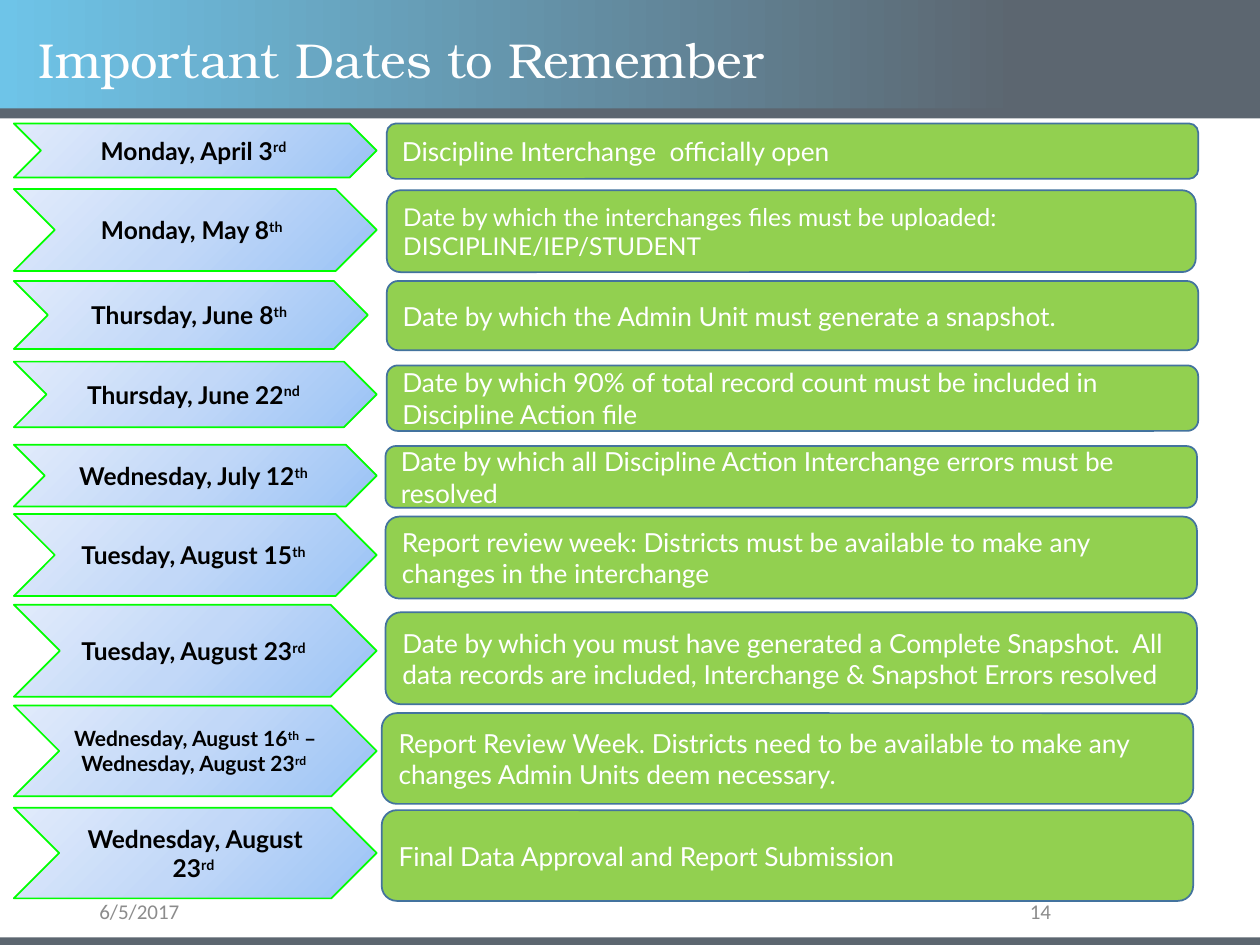
from lxml.etree import SubElement
from pptx import Presentation
from pptx.dml.color import RGBColor
from pptx.enum.shapes import MSO_SHAPE
from pptx.enum.text import MSO_ANCHOR, PP_ALIGN
from pptx.oxml.ns import qn
from pptx.util import Inches, Pt

rgb = RGBColor.from_string


def gradient(sp, stops):
    sp.fill.gradient()
    grad = sp._element.spPr.find(qn("a:gradFill"))
    for child in list(grad):
        grad.remove(child)
    gs_list = SubElement(grad, qn("a:gsLst"))
    for pos, color in stops:
        gs = SubElement(gs_list, qn("a:gs"), pos=str(pos * 1000))
        SubElement(gs, qn("a:srgbClr"), val=color)
    return grad


def write(sp, runs, size, font, color, align=PP_ALIGN.LEFT, bold=False):
    tf = sp.text_frame
    tf.word_wrap = True
    tf.vertical_anchor = MSO_ANCHOR.MIDDLE
    p = tf.paragraphs[0]
    p.alignment = align
    for i, text in enumerate(runs):
        r = p.add_run()
        r.text = text
        r.font.size = Pt(size)
        r.font.name = font
        r.font.bold = bold
        r.font.color.rgb = rgb(color)
        if i % 2:
            r.font._element.set("baseline", "30000")
    return p


prs = Presentation()
prs.slide_width, prs.slide_height = Inches(10), Inches(7.5)
s = prs.slides.add_slide(prs.slide_layouts[6])

for y, h in [(0, 0.87), (0.86, 0.08), (7.44, 0.08)]:
    bar = s.shapes.add_shape(MSO_SHAPE.RECTANGLE, 0, Inches(y), Inches(10), Inches(h))
    bar.shadow.inherit = False
    bar.line.fill.background()
    if y == 0:
        grad = gradient(bar, [(0, "6EC4E8"), (81, "5C6670")])
        SubElement(grad, qn("a:lin"), ang="0", scaled="0")
    else:
        bar.fill.solid()
        bar.fill.fore_color.rgb = rgb("5C6670")

labels = [
    (0.69, 7.12, 2.25, 0.23, "6/5/2017", 12, "Calibri", "8C8C8C", PP_ALIGN.LEFT),
    (7.06, 7.12, 1.38, 0.23, "14", 12, "Calibri", "8C8C8C", PP_ALIGN.RIGHT),
    (0.21, 0.21, 8.62, 0.57, "Important Dates to Remember", 28, "TeX Gyre Bonum", "FFFFFF", PP_ALIGN.LEFT),
]
for x, y, w, h, text, size, font, color, align in labels:
    tb = s.shapes.add_textbox(Inches(x), Inches(y), Inches(w), Inches(h))
    p = write(tb, [text], size, font, color, align)
    if size == 28:
        p.line_spacing = 0.9

rows = [
    (0.98, 2.88, 0.43, ["Monday, April 3", "rd "], 14,
     3.07, 0.98, 6.44, 0.44, "Discipline Interchange  officially open", 15),
    (1.5, 2.88, 0.65, ["Monday, May 8", "th  "], 14,
     3.07, 1.51, 6.42, 0.65, "Date by which the interchanges files must be uploaded: DISCIPLINE/IEP/STUDENT", 14),
    (2.23, 2.81, 0.54, ["Thursday, June 8", "th "], 14,
     3.07, 2.23, 6.44, 0.55, "Date by which the Admin Unit must generate a snapshot.", 15),
    (2.87, 2.88, 0.52, ["Thursday, June 22", "nd "], 14,
     3.07, 2.9, 6.44, 0.52, "Date by which 90% of total record count must be included in Discipline Action file", 15),
    (3.53, 2.88, 0.49, ["Wednesday, July 12", "th "], 14,
     3.06, 3.54, 6.44, 0.49, "Date by which all Discipline Action Interchange errors must be resolved", 15),
    (4.08, 2.88, 0.65, ["Tuesday, August 15", "th "], 14,
     3.06, 4.1, 6.44, 0.65,
     "Report review week: Districts must be available to make any changes in the interchange", 15),
    (4.8, 2.88, 0.73, ["Tuesday, August 23", "rd "], 14,
     3.06, 4.86, 6.44, 0.73,
     "Date by which you must have generated a Complete Snapshot.  All data records are included, "
     "Interchange & Snapshot Errors resolved", 15),
    (5.6, 2.88, 0.72, ["Wednesday, August 16", "th", " – Wednesday, August 23", "rd "], 12,
     3.03, 5.66, 6.44, 0.72,
     "Report Review Week. Districts need to be available to make any changes Admin Units deem necessary.", 15),
    (6.41, 2.88, 0.72, ["Wednesday, August 23", "rd "], 14,
     3.03, 6.43, 6.44, 0.72, "Final Data Approval and Report Submission", 15),
]
for date_y, date_w, date_h, date, date_size, x, y, w, h, task, task_size in rows:
    chevron = s.shapes.add_shape(
        MSO_SHAPE.CHEVRON, Inches(0.11), Inches(date_y), Inches(date_w), Inches(date_h))
    grad = gradient(chevron, [(0, "9AC3F5"), (50, "C2D8F8"), (100, "E1EBFB")])
    circle = SubElement(grad, qn("a:path"), path="circle")
    SubElement(circle, qn("a:fillToRect"), l="100000", t="100000")
    write(chevron, date, date_size, "Lato", "000000", PP_ALIGN.CENTER, True)

    box = s.shapes.add_shape(
        MSO_SHAPE.ROUNDED_RECTANGLE, Inches(x), Inches(y), Inches(w), Inches(h))
    box.fill.solid()
    box.fill.fore_color.rgb = rgb("92D050")
    write(box, [task], task_size, "Lato", "FFFFFF")

    for sp, color in [(chevron, "00FF00"), (box, "43739E")]:
        sp.shadow.inherit = False
        sp.line.color.rgb = rgb(color)
        sp.line.width = Pt(1)

prs.save("out.pptx")
